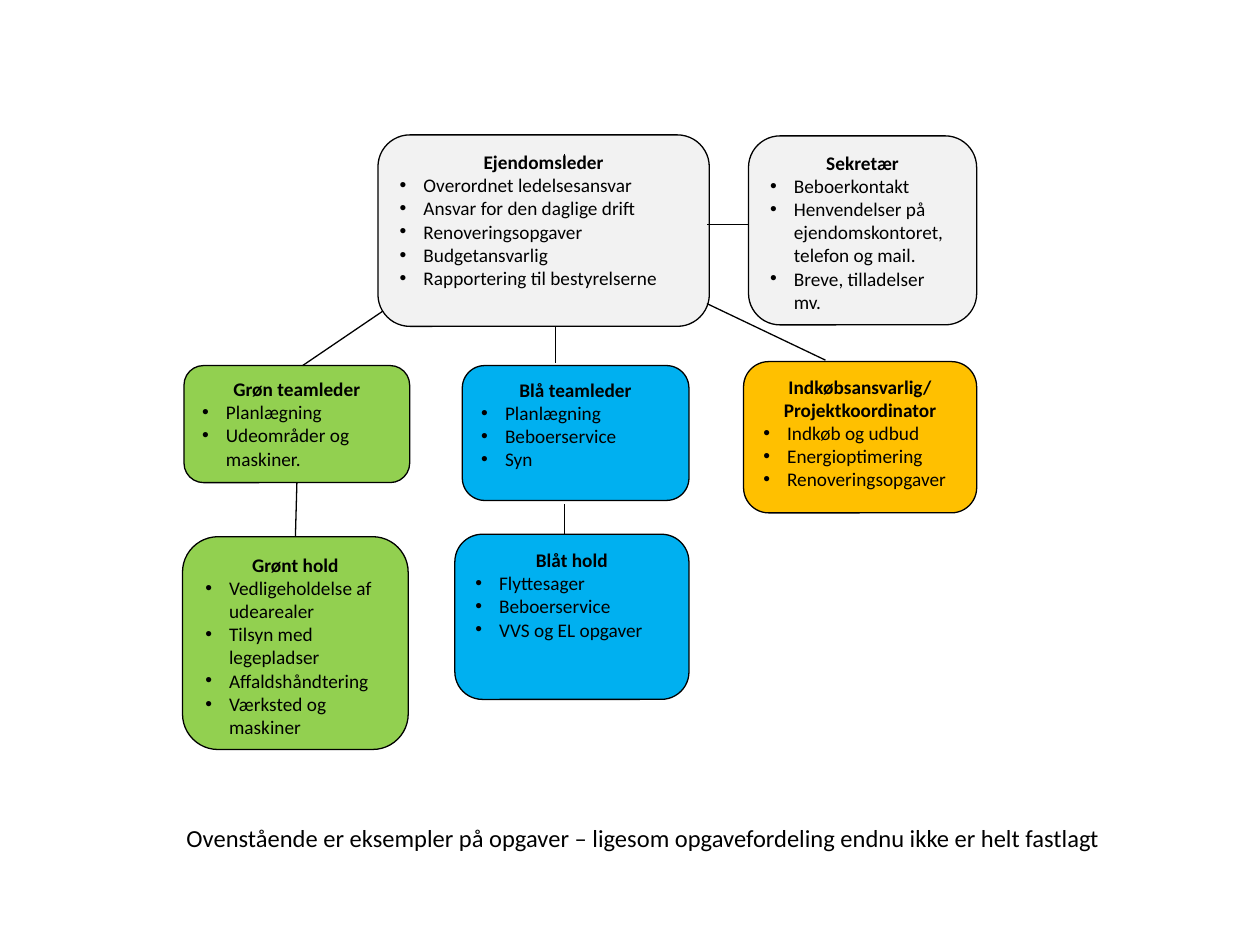
import pptx
import pptx.util
import pptx.dml.color
import pptx.enum.shapes
import pptx.enum.text
import pptx.oxml.ns
from lxml import etree

Cm, Pt = pptx.util.Cm, pptx.util.Pt
Align = pptx.enum.text.PP_ALIGN

# Content: key -> (fill, left, top, width, height in cm, headings, tasks)
BOXES = {
    "leader": ("grey", 7.62, 2.72, 6.68, 3.86, ["Ejendomsleder"],
               ["Overordnet ledelsesansvar", "Ansvar for den daglige drift",
                "Renoveringsopgaver", "Budgetansvarlig",
                "Rapportering til bestyrelserne"]),
    "clerk": ("grey", 15.09, 2.74, 4.6, 3.81, ["Sekretær"],
              ["Beboerkontakt",
               "Henvendelser på ejendomskontoret, telefon og mail.",
               "Breve, tilladelser mv."]),
    "blue lead": ("blue", 9.32, 7.37, 4.57, 2.72, ["Blå teamleder"],
                  ["Planlægning", "Beboerservice", "Syn"]),
    "green team": ("green", 3.68, 10.82, 4.55, 4.29, ["Grønt hold"],
                   ["Vedligeholdelse af udearealer", "Tilsyn med legepladser",
                    "Affaldshåndtering", "Værksted og maskiner"]),
    "buyer": ("gold", 14.99, 7.29, 4.7, 3.05,
              ["Indkøbsansvarlig/", "Projektkoordinator"],
              ["Indkøb og udbud", "Energioptimering", "Renoveringsopgaver"]),
    "green lead": ("green", 3.71, 7.37, 4.55, 2.36, ["Grøn teamleder"],
                   ["Planlægning", "Udeområder og maskiner."]),
    "blue team": ("blue", 9.17, 10.77, 4.72, 3.33, ["Blåt hold"],
                  ["Flyttesager", "Beboerservice", "VVS og EL opgaver"]),
}
# Loose lines: x1, y1, x2, y2 in cm
LINES = [
    (15.09, 4.52, 14.25, 4.52),
    (11.2, 6.58, 11.2, 7.32),
    (14.25, 6.12, 16.64, 7.26),
    (7.72, 6.27, 6.1, 7.37),
    (11.38, 3.1, 11.38, 3.4),
    (11.38, 10.77, 11.38, 10.16),
]
# Joined lines: upper box, lower box
JOINS = [("green lead", "green team")]
NOTE = ("Ovenstående er eksempler på opgaver – ligesom opgavefordeling "
        "endnu ikke er helt fastlagt")

THEME = {
    "font": "Calibri", "body": 11, "note": 14, "line": 0.75, "indent": 0.48,
    "ink": "000000", "grey": "F2F2F2", "blue": "00B0F0",
    "green": "92D050", "gold": "FFC000",
}


def tint(name):
    return pptx.dml.color.RGBColor.from_string(THEME[name])


def style(font, size, bold=False):
    form = {"name": THEME["font"], "size": Pt(THEME[size]), "bold": bold}
    for key, val in form.items():
        setattr(font, key, val)
    font.color.rgb = tint("ink")


def stroke(line):
    line.color.rgb = tint("ink")
    line.width = Pt(THEME["line"])


def bullet(para):
    props = para._p.get_or_add_pPr()
    step = int(Cm(THEME["indent"]))
    props.set("marL", str(step))
    props.set("indent", str(-step))
    for tag, key, val in (("a:buFont", "typeface", "Arial"),
                          ("a:buChar", "char", "•")):
        etree.SubElement(props, pptx.oxml.ns.qn(tag)).set(key, val)


def add_box(slide, fill, left, top, width, height, heads, tasks):
    kind = pptx.enum.shapes.MSO_SHAPE.ROUNDED_RECTANGLE
    box = slide.shapes.add_shape(kind, Cm(left), Cm(top), Cm(width), Cm(height))
    box.shadow.inherit = False
    box.fill.solid()
    box.fill.fore_color.rgb = tint(fill)
    stroke(box.line)
    frame = box.text_frame
    frame.word_wrap = True
    frame.vertical_anchor = pptx.enum.text.MSO_ANCHOR.TOP
    for num, text in enumerate(heads + tasks):
        para = frame.add_paragraph() if num else frame.paragraphs[0]
        head = num < len(heads)
        para.alignment = Align.CENTER if head else Align.LEFT
        if not head:
            bullet(para)
        para.text = text
        style(para.font, "body", head)
    return box


def add_line(slide, *ends):
    kind = pptx.enum.shapes.MSO_CONNECTOR.STRAIGHT
    line = slide.shapes.add_connector(kind, *map(Cm, ends))
    stroke(line.line)
    etree.SubElement(line._element.spPr, pptx.oxml.ns.qn("a:effectLst"))
    return line


def add_note(slide):
    note = slide.shapes.add_textbox(Cm(3.51), Cm(16.46), Cm(19.2), Cm(0.86))
    frame = note.text_frame
    frame.word_wrap = True
    frame.auto_size = pptx.enum.text.MSO_AUTO_SIZE.SHAPE_TO_FIT_TEXT
    frame.text = NOTE
    style(frame.paragraphs[0].font, "note")


def main():
    deck = pptx.Presentation()
    deck.slide_width, deck.slide_height = Cm(25.4), Cm(19.05)
    slide = deck.slides.add_slide(deck.slide_layouts[6])

    # Roles, then the lines between them
    boxes = {key: add_box(slide, *box) for key, box in BOXES.items()}
    for ends in LINES:
        add_line(slide, *ends)
    for upper, lower in JOINS:
        line = add_line(slide, 0, 0, 0, 0)
        line.begin_connect(boxes[lower], 0)
        line.end_connect(boxes[upper], 2)

    add_note(slide)
    deck.save("out.pptx")


if __name__ == "__main__":
    main()
